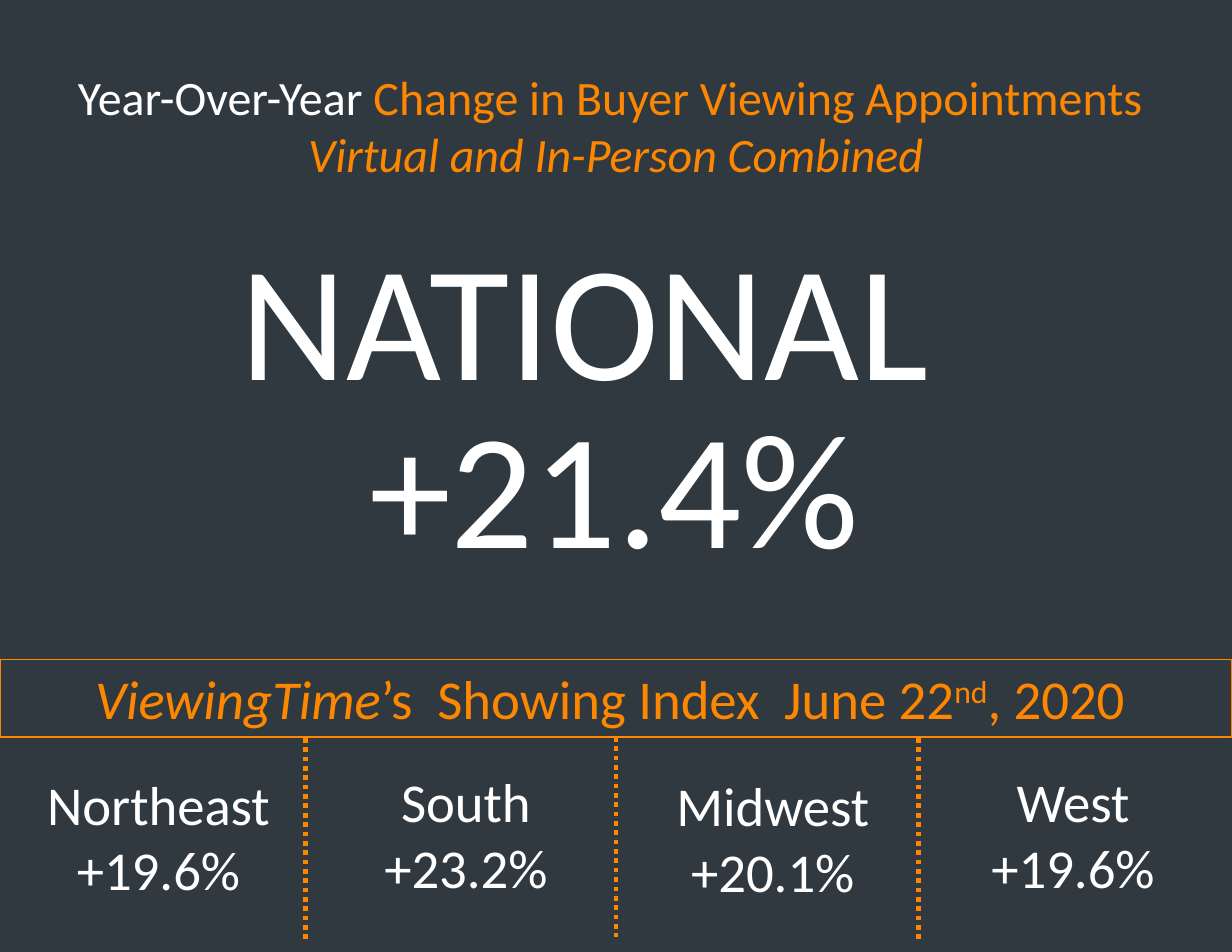
from dataclasses import dataclass

from lxml import etree
from pptx import Presentation
from pptx.dml.color import RGBColor
from pptx.enum import dml, shapes, text
from pptx.oxml import ns
from pptx.util import Inches, Pt

SLATE, ORANGE, WHITE = "313940", "FD8700", "FFFFFF"
BAND_TOP, BAND_TALL = 5.89, 0.69


@dataclass
class Region:
    name: str
    change: str
    left: float
    top: float
    width: float


@dataclass
class Rule:
    x: float
    top: float
    joined: bool = False


REGIONS = [
    Region("Northeast", "+19.6%", 0.31, 6.83, 2.21),
    Region("South", "+23.2%", 3.32, 6.81, 1.68),
    Region("Midwest", "+20.1%", 5.93, 6.84, 1.94),
    Region("West", "+19.6%", 8.74, 6.81, 1.68),
]
RULES = [Rule(5.5, 6.58, True), Rule(8.2, 6.59), Rule(2.73, 6.59)]


def tint(code: str) -> RGBColor:
    return RGBColor.from_string(code)


def style(para, size: float, color: str) -> None:
    para.alignment = text.PP_ALIGN.CENTER
    font = para.font
    font.name, font.size = "Calibri", Pt(size)
    font.color.rgb = tint(color)


def add_run(para, words: str):
    run = para.add_run()
    run.text = words
    return run


def add_text(parent, lines: list[str], box: tuple, size: float, wrap: bool = True):
    label = parent.add_textbox(*map(Inches, box))
    frame = label.text_frame
    frame.word_wrap = wrap
    frame.auto_size = text.MSO_AUTO_SIZE.SHAPE_TO_FIT_TEXT
    frame.text = "\n".join(lines)
    for para in frame.paragraphs:
        style(para, size, WHITE)
    return label


def add_title(slide) -> None:
    title = slide.shapes.title
    title.left, title.top = Inches(0), Inches(0.55)
    title.width, title.height = Inches(11), Inches(1.14)
    frame = title.text_frame
    frame.word_wrap = True
    frame.auto_size = text.MSO_AUTO_SIZE.SHAPE_TO_FIT_TEXT
    frame.vertical_anchor = text.MSO_ANCHOR.TOP
    first, second = frame.paragraphs[0], frame.add_paragraph()
    add_run(first, "Year-Over-Year").font.color.rgb = tint(WHITE)
    add_run(first, " Change in Buyer Viewing Appointments ").font.color.rgb = tint(ORANGE)
    add_run(second, "Virtual and In-Person Combined")
    for para in (first, second):
        style(para, 30.8, ORANGE)
    second.font.italic = True


def add_band(slide):
    band = slide.shapes.add_shape(
        shapes.MSO_SHAPE.RECTANGLE,
        Inches(0), Inches(BAND_TOP), Inches(11), Inches(BAND_TALL),
    )
    band.shadow.inherit = False
    band.fill.background()
    band.line.color.rgb = tint(ORANGE)
    band.line.width = Pt(0.75)
    frame = band.text_frame
    frame.word_wrap = True
    frame.auto_size = text.MSO_AUTO_SIZE.SHAPE_TO_FIT_TEXT
    frame.vertical_anchor = text.MSO_ANCHOR.TOP
    para = frame.paragraphs[0]
    style(para, 35.2, ORANGE)
    add_run(para, "ViewingTime").font.italic = True
    add_run(para, "’s  Showing Index  June 22")
    add_run(para, "nd").font._element.set("baseline", "30000")
    add_run(para, ", 2020 ")
    return band


def add_rule(slide, rule: Rule, band) -> None:
    line = slide.shapes.add_connector(
        shapes.MSO_CONNECTOR.STRAIGHT,
        Inches(rule.x), Inches(rule.top), Inches(rule.x), Inches(rule.top + 1.79),
    )
    if rule.joined:
        line.begin_connect(band, 2)
    line.line.color.rgb = tint(ORANGE)
    line.line.width = Pt(3)
    line.line.dash_style = dml.MSO_LINE.ROUND_DOT
    etree.SubElement(line._element.spPr, ns.qn("a:effectLst"))


def main() -> None:
    deck = Presentation()
    deck.slide_width, deck.slide_height = Inches(11), Inches(8.5)
    slide = deck.slides.add_slide(deck.slide_layouts[5])
    slide.background.fill.solid()
    slide.background.fill.fore_color.rgb = tint(SLATE)

    add_title(slide)
    band = add_band(slide)
    for rule in RULES:
        add_rule(slide, rule, band)
    for area in REGIONS:
        box = (area.left, area.top, area.width, 1.29)
        add_text(slide.shapes, [area.name, area.change], box, 35.2, False)

    group = slide.shapes.add_group_shape()
    head = add_text(group.shapes, ["NATIONAL"], (0, 1.88, 11, 1.88), 105.6)
    head.text_frame.margin_right = Inches(0.65)
    add_text(group.shapes, ["+21.4%"], (2.73, 3.38, 5.51, 1.88), 105.6)
    deck.save("out.pptx")


if __name__ == "__main__":
    main()
